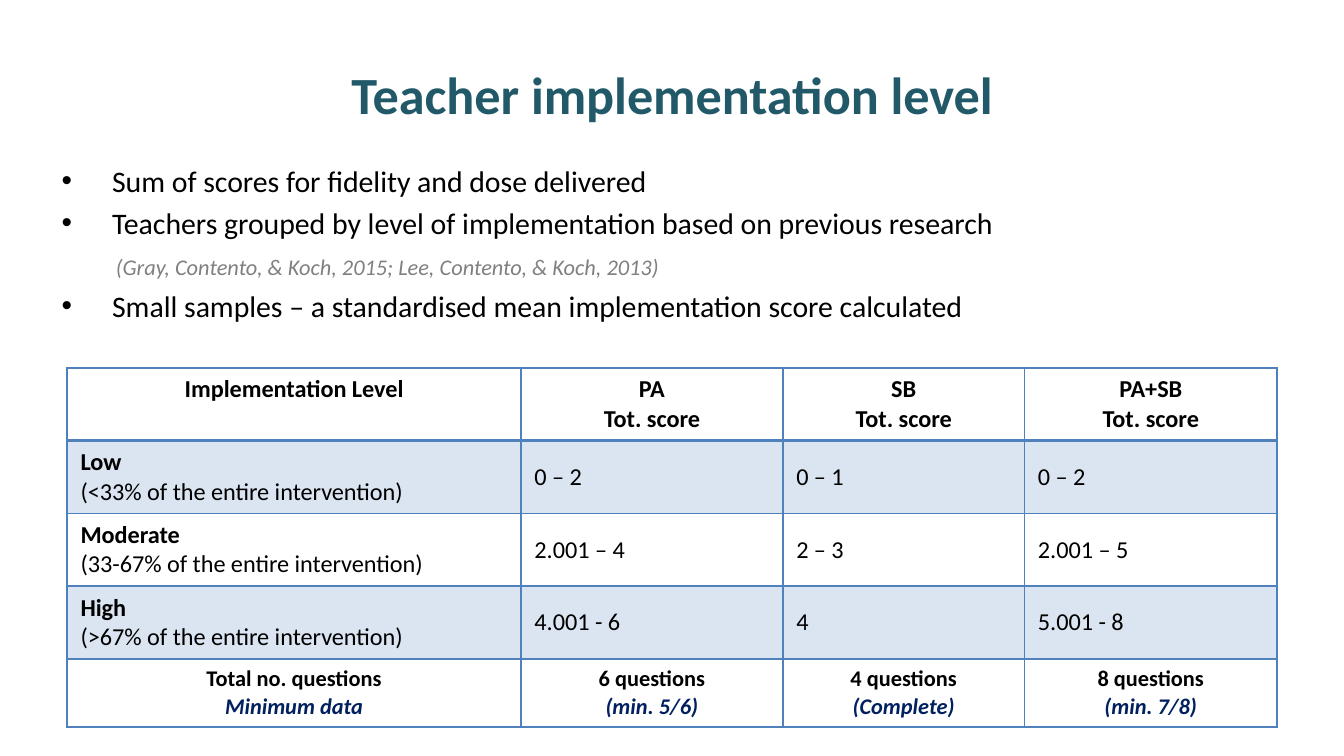
import pptx
import pptx.util
import pptx.dml.color
import pptx.enum.text
import pptx.oxml
import pptx.oxml.ns

Pt = pptx.util.Pt
Color = pptx.dml.color.RGBColor.from_string
Align = pptx.enum.text.PP_ALIGN
Anchor = pptx.enum.text.MSO_ANCHOR

# Content
TITLE = "Teacher implementation level"
POINTS = [  # text, style, space before
    ("Sum of scores for fidelity and dose delivered", "point", 0),
    ("Teachers grouped by level of implementation based on previous research", "point", 3.2),
    ("(Gray, Contento, & Koch, 2015; Lee, Contento, & Koch, 2013)", "cite", 7),
    ("Small samples – a standardised mean implementation score calculated", "point", 4),
]
HEAD = [["Implementation Level"], ["PA", "Tot. score"], ["SB", "Tot. score"], ["PA+SB", "Tot. score"]]
LEVELS = [
    ("Low", "(<33% of the entire intervention)", "0 – 2", "0 – 1", "0 – 2"),
    ("Moderate", "(33-67% of the entire intervention)", "2.001 – 4", "2 – 3", "2.001 – 5"),
    ("High", "(>67% of the entire intervention)", "4.001 - 6", "4", "5.001 - 8"),
]
TOTALS = [("Total no. questions", "Minimum data"), ("6 questions", "(min. 5/6)"),
          ("4 questions", "(Complete)"), ("8 questions", "(min. 7/8)")]

# Theme and layout, in points
THEME = {
    "font": "Calibri", "line": "4F81BD", "alpha": 20000,
    # size, colour, bold, italic
    "title": (28, "215968", True, False),
    "point": (16, "000000", False, False),
    "cite": (12, "808080", False, True),
    "strong": (13, "000000", True, False),
    "plain": (13, "000000", False, False),
    "total": (12, "000000", True, False),
    "min": (12, "002060", True, True),
}
SIZE = (720.7, 405.4)
TITLE_BOX = (36, 16.6, 648.7, 67.7)
BODY_BOX = (25.9, 83.5, 658.8, 261.4)
GRID_AT = (36, 197.2)
COLS = (243.4, 140.4, 129.6, 135.4)
ROWS = (39.2, 39, 39, 39, 36.5)
INDENT, CITE_INDENT = 27, 29


def place(shape, box):
    shape.left, shape.top, shape.width, shape.height = map(Pt, box)


def add_run(para, text, style):
    size, color, bold, italic = THEME[style]
    run = para.add_run()
    run.text = text
    font = run.font
    font.name, font.size, font.bold, font.italic = THEME["font"], Pt(size), bold, italic
    font.color.rgb = Color(color)


def make(tag, inner="", **attrs):
    pairs = "".join(f' {key}="{val}"' for key, val in attrs.items())
    return pptx.oxml.parse_xml(f'<a:{tag} {pptx.oxml.ns.nsdecls("a")}{pairs}>{inner}</a:{tag}>')


def next_para(frame, index):
    return frame.paragraphs[0] if index == 0 else frame.add_paragraph()


def set_bullet(para, style):
    props = para._p.get_or_add_pPr()
    if style == "point":
        props.set("marL", str(Pt(INDENT)))
        props.set("indent", str(-Pt(INDENT)))
        props.append(make("buFont", typeface="Arial"))
        props.append(make("buChar", char="•"))
    else:
        props.set("marL", str(Pt(CITE_INDENT)))
        props.set("indent", "0")
        props.append(make("buNone"))


def set_edges(cell, top, base):
    props = cell._tc.get_or_add_tcPr()
    fill = f'<a:solidFill><a:srgbClr val="{THEME["line"]}"/></a:solidFill>'
    edges = (("lnL", 1), ("lnR", 1), ("lnT", top), ("lnB", base))
    for index, (tag, width) in enumerate(edges):
        props.insert(index, make(tag, fill, w=Pt(width)))


def set_fill(cell, shaded):
    if not shaded:
        cell.fill.background()
        return
    cell.fill.solid()
    cell.fill.fore_color.rgb = Color(THEME["line"])
    tint = cell._tc.tcPr.find(".//" + pptx.oxml.ns.qn("a:srgbClr"))
    tint.append(make("alpha", val=THEME["alpha"]))


def table_rows():
    rows = [[[(text, "strong") for text in cell] for cell in HEAD]]
    for name, span, *scores in LEVELS:
        rows.append([[(name, "strong"), (span, "plain")]] + [[(score, "plain")] for score in scores])
    rows.append([[(count, "total"), (least, "min")] for count, least in TOTALS])
    return rows


def add_grid(slide):
    frame = slide.shapes.add_table(len(ROWS), len(COLS), *map(Pt, GRID_AT + (sum(COLS), sum(ROWS))))
    table = frame.table
    table.first_row = table.horz_banding = False
    for col, width in zip(table.columns, COLS):
        col.width = Pt(width)
    for row, height in zip(table.rows, ROWS):
        row.height = Pt(height)
    for r, row in enumerate(table_rows()):
        level = 1 <= r <= len(LEVELS)
        for c, lines in enumerate(row):
            cell = table.cell(r, c)
            cell.vertical_anchor = Anchor.MIDDLE if level else Anchor.TOP
            set_fill(cell, level and r % 2 == 1)
            set_edges(cell, 2 if r == 1 else 1, 2 if r == 0 else 1)
            for i, (text, style) in enumerate(lines):
                para = next_para(cell.text_frame, i)
                para.alignment = Align.LEFT if level else Align.CENTER
                add_run(para, text, style)


def main():
    deck = pptx.Presentation()
    deck.slide_width, deck.slide_height = map(Pt, SIZE)
    slide = deck.slides.add_slide(deck.slide_layouts[1])

    # Title
    title = slide.shapes.title
    place(title, TITLE_BOX)
    title.text_frame.vertical_anchor = Anchor.MIDDLE
    para = title.text_frame.paragraphs[0]
    para.alignment = Align.CENTER
    add_run(para, TITLE, "title")

    # Bullet list
    body = slide.placeholders[1]
    place(body, BODY_BOX)
    body.text_frame.auto_size = pptx.enum.text.MSO_AUTO_SIZE.NONE
    for i, (text, style, gap) in enumerate(POINTS):
        para = next_para(body.text_frame, i)
        set_bullet(para, style)
        para.space_before = Pt(gap)
        add_run(para, text, style)

    # Score table
    add_grid(slide)
    deck.save("out.pptx")


if __name__ == "__main__":
    main()
